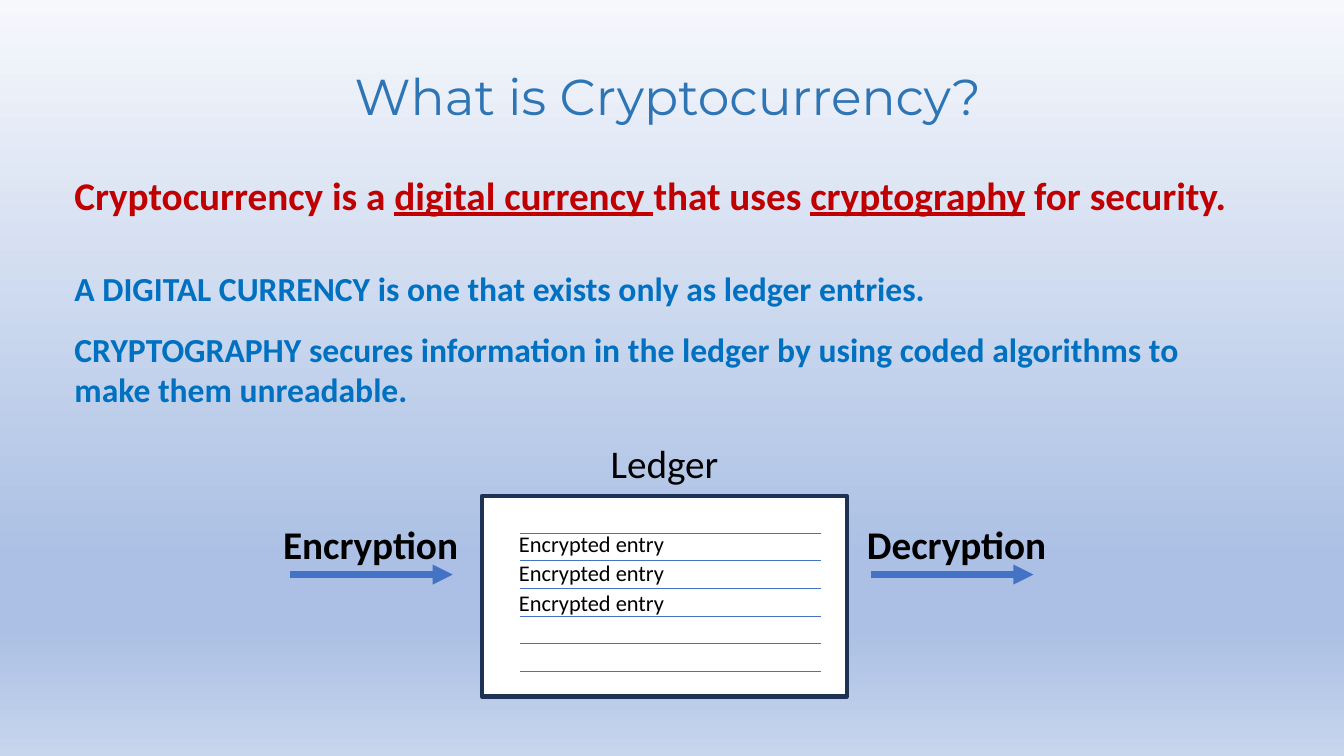
"""Build the slide that explains what cryptocurrency is."""
import copy

import pptx
import pptx.dml.color
import pptx.enum.shapes
import pptx.enum.text
import pptx.oxml.ns
import pptx.util

RGBColor = pptx.dml.color.RGBColor
WIDTH = pptx.util.Inches(13.33)
HEIGHT = pptx.util.Inches(7.5)

TITLE_BLUE = RGBColor(0x2E, 0x75, 0xB6)
RED = RGBColor(0xC0, 0x00, 0x00)
TEXT_BLUE = RGBColor(0x00, 0x70, 0xC0)
BLACK = RGBColor(0x00, 0x00, 0x00)
WHITE = RGBColor(0xFF, 0xFF, 0xFF)
NAVY = RGBColor(0x1E, 0x32, 0x56)
LINE_BLUE = RGBColor(0x44, 0x72, 0xC4)
SKY = [
    (0, RGBColor(0xF6, 0xF8, 0xFC)),
    (0.74, RGBColor(0xAB, 0xC0, 0xE4)),
    (0.83, RGBColor(0xAB, 0xC0, 0xE4)),
    (1, RGBColor(0xC7, 0xD5, 0xED)),
]

MARGIN = 4.8
LEDGER_LEFT, LEDGER_TOP = 35.86, 65.6
LEDGER_WIDTH, LEDGER_HEIGHT = 27.16, 26.53
LABEL_HEIGHT = 7.6
RULE_LEFT, RULE_RIGHT = 38.71, 61.07
RULE_TOP, RULE_STEP, RULE_COUNT = 70.53, 3.65, 6
ENTRY_TOP, ENTRY_STEP, ENTRY_COUNT = 69.47, 3.87, 3
ARROW_ROW, ARROW_LENGTH = 76, 12.07


def across(share):
    """Turn a percentage of the slide's width into a length."""
    return round(WIDTH * share / 100)


def down(share):
    """Turn a percentage of the slide's height into a length."""
    return round(HEIGHT * share / 100)


def frame(left, top, width, height):
    """Turn four percentages into a position and size."""
    return across(left), down(top), across(width), down(height)


def paint_background(page, stops):
    """Fill the background with a gradient running from top to bottom."""
    fill = page.background.fill
    fill.gradient()
    fill.gradient_angle = 270
    stop_list = page.element.find(".//" + pptx.oxml.ns.qn("a:gsLst"))
    while len(stop_list) < len(stops):
        stop_list.append(copy.deepcopy(stop_list[0]))
    for stop, (position, color) in zip(fill.gradient_stops, stops):
        stop.position = position
        stop.color.rgb = color


def add_text(page, area, *texts, size, color, font="Calibri", bold=False,
             centered=False, underlined=()):
    """Add a text box whose paragraph joins the given texts."""
    box = page.shapes.add_textbox(*frame(*area))
    box.text_frame.word_wrap = True
    box.text_frame.auto_size = pptx.enum.text.MSO_AUTO_SIZE.SHAPE_TO_FIT_TEXT
    para = box.text_frame.paragraphs[0]
    align = pptx.enum.text.PP_ALIGN
    para.alignment = align.CENTER if centered else align.LEFT
    for text in texts:
        span = para.add_run()
        span.text = text
        span.font.name = font
        span.font.size = pptx.util.Pt(size)
        span.font.bold = bold
        span.font.underline = text in underlined
        span.font.color.rgb = color


def add_line(page, left, right, row, weight, arrow=False):
    """Add a level line, with an arrowhead at its right end if asked."""
    line = page.shapes.add_connector(
        pptx.enum.shapes.MSO_CONNECTOR.STRAIGHT,
        across(left), down(row), across(right), down(row))
    line.line.color.rgb = LINE_BLUE
    line.line.width = pptx.util.Pt(weight)
    if arrow:
        head = pptx.oxml.parse_xml(
            f'<a:tailEnd {pptx.oxml.ns.nsdecls("a")} type="triangle"/>')
        line.line._get_or_add_ln().append(head)
    effects = pptx.oxml.parse_xml(
        f'<a:effectLst {pptx.oxml.ns.nsdecls("a")}/>')
    line.element.spPr.append(effects)


def add_ledger(page):
    """Add the ledger sheet with its rules, heading and entries."""
    sheet = page.shapes.add_shape(
        pptx.enum.shapes.MSO_SHAPE.RECTANGLE,
        *frame(LEDGER_LEFT, LEDGER_TOP, LEDGER_WIDTH, LEDGER_HEIGHT))
    sheet.shadow.inherit = False
    sheet.fill.solid()
    sheet.fill.fore_color.rgb = WHITE
    sheet.line.color.rgb = NAVY
    sheet.line.width = pptx.util.Pt(3)
    for index in range(RULE_COUNT):
        add_line(page, RULE_LEFT, RULE_RIGHT, RULE_TOP + index * RULE_STEP, 0.5)
    add_text(page, (LEDGER_LEFT, 57.47, LEDGER_WIDTH, LABEL_HEIGHT), "Ledger",
             size=28, color=BLACK, centered=True)
    for index in range(ENTRY_COUNT):
        top = ENTRY_TOP + index * ENTRY_STEP
        add_text(page, (37.88, top, 13.88, 4.93), "Encrypted entry",
                 size=16, color=BLACK)


def add_step(page, name, left, width, arrow_left):
    """Add a named step with an arrow under its name."""
    add_text(page, (left, 68.13, width, LABEL_HEIGHT), name,
             size=28, color=BLACK, bold=True)
    add_line(page, arrow_left, arrow_left + ARROW_LENGTH, ARROW_ROW, 4.75,
             arrow=True)


def main():
    """Build the slide and save it."""
    deck = pptx.Presentation()
    deck.slide_width, deck.slide_height = WIDTH, HEIGHT
    page = deck.slides.add_slide(deck.slide_layouts[6])
    paint_background(page, SKY)
    add_text(page, (3.45, 8, 92.5, 9.47), "What is Cryptocurrency?",
             size=36, color=TITLE_BLUE, font="Montserrat", centered=True)
    add_text(page, (MARGIN, 22, 88.82, LABEL_HEIGHT),
             "Cryptocurrency is a ", "digital currency ", "that uses ",
             "cryptography", " for security.", size=28, color=RED, bold=True,
             underlined=("digital currency ", "cryptography"))
    add_text(page, (MARGIN, 34.8, 85.75, 6.67),
             "A DIGITAL CURRENCY is one that exists only as ledger entries.",
             size=24, color=TEXT_BLUE, bold=True)
    add_text(page, (MARGIN, 42.8, 85.75, 12.13),
             "CRYPTOGRAPHY secures information in the ledger by using coded "
             "algorithms to make them unreadable.",
             size=24, color=TEXT_BLUE, bold=True)
    add_ledger(page)
    add_step(page, "Encryption", 20.33, 15.53, 21.61)
    add_step(page, "Decryption", 63.77, 17.33, 64.82)
    deck.save("out.pptx")


if __name__ == "__main__":
    main()
